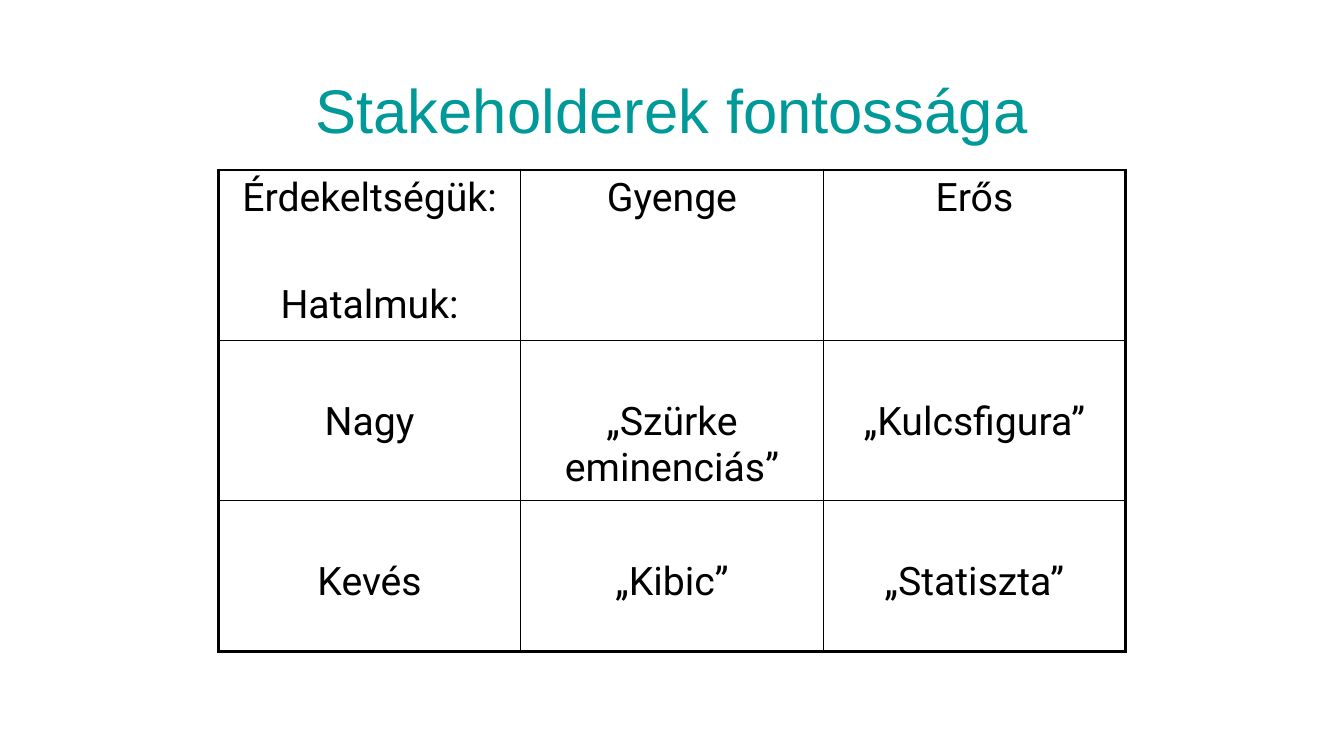
import pptx
import pptx.dml.color
import pptx.enum.text
import pptx.oxml
import pptx.oxml.ns
import pptx.util

Pt = pptx.util.Pt

BLACK = "000000"
TEAL = "009999"
THIN, THICK = 1, 2.25
COLUMN_WIDTH = 216
ROW_HEIGHTS = [121.5, 114.5, 108]
BODY_TOP_MARGIN = 42
ROWS = [
    [["Érdekeltségük:", "Hatalmuk:"], ["Gyenge"], ["Erős"]],
    [["Nagy"], ["„Szürke eminenciás”"], ["„Kulcsfigura”"]],
    [["Kevés"], ["„Kibic”"], ["„Statiszta”"]],
]


def color(value):
    return pptx.dml.color.RGBColor.from_string(value)


def write_text(paragraph, text, *, size, font, fill=BLACK, space_before=0):
    paragraph.alignment = pptx.enum.text.PP_ALIGN.CENTER
    paragraph.space_before = Pt(space_before)
    run = paragraph.add_run()
    run.text = text
    run.font.name = font
    run.font.size = Pt(size)
    run.font.color.rgb = color(fill)


def set_borders(cell, left, right, top, bottom):
    properties = cell._tc.get_or_add_tcPr()
    sides = {"lnL": left, "lnR": right, "lnT": top, "lnB": bottom}
    for index, (tag, width) in enumerate(sides.items()):
        line = pptx.oxml.parse_xml(
            f'<a:{tag} {pptx.oxml.ns.nsdecls("a")} w="{int(Pt(width))}">'
            f'<a:solidFill><a:srgbClr val="{BLACK}"/></a:solidFill></a:{tag}>'
        )
        properties.insert(index, line)


def add_title(slide, text):
    title = slide.shapes.title
    title.left, title.top, title.width, title.height = Pt(48), Pt(23), Pt(864), Pt(109)
    title.text_frame.vertical_anchor = pptx.enum.text.MSO_ANCHOR.MIDDLE
    write_text(title.text_frame.paragraphs[0], text, size=44, font="Arial", fill=TEAL)


def fill_cell(cell, lines, top_margin):
    cell.fill.background()
    cell.margin_left = cell.margin_right = Pt(7.2)
    cell.margin_top, cell.margin_bottom = Pt(top_margin), Pt(3.6)
    for index, text in enumerate(lines):
        frame = cell.text_frame
        paragraph = frame.add_paragraph() if index else frame.paragraphs[0]
        write_text(paragraph, text, size=28, font="Roboto",
                   space_before=44 if index else 0)


def add_matrix(slide, rows):
    row_count, column_count = len(rows), len(rows[0])
    table = slide.shapes.add_table(
        row_count, column_count, Pt(156), Pt(121.5),
        Pt(COLUMN_WIDTH * column_count), Pt(sum(ROW_HEIGHTS)),
    ).table
    table.first_row = table.horz_banding = False
    for column in table.columns:
        column.width = Pt(COLUMN_WIDTH)
    for row_index, row in enumerate(rows):
        table.rows[row_index].height = Pt(ROW_HEIGHTS[row_index])
        for column_index, lines in enumerate(row):
            cell = table.cell(row_index, column_index)
            fill_cell(cell, lines, BODY_TOP_MARGIN if row_index else 3.6)
            # Thick lines only on the outer frame
            set_borders(
                cell,
                left=THICK if column_index == 0 else THIN,
                right=THICK if column_index == column_count - 1 else THIN,
                top=THICK if row_index == 0 else THIN,
                bottom=THICK if row_index == row_count - 1 else THIN,
            )


def main():
    presentation = pptx.Presentation()
    presentation.slide_width, presentation.slide_height = Pt(960), Pt(540)
    title_only = presentation.slide_layouts[5]
    slide = presentation.slides.add_slide(title_only)

    # Heading
    add_title(slide, "Stakeholderek fontossága")

    # Interest and power matrix
    add_matrix(slide, ROWS)

    presentation.save("out.pptx")


if __name__ == "__main__":
    main()
